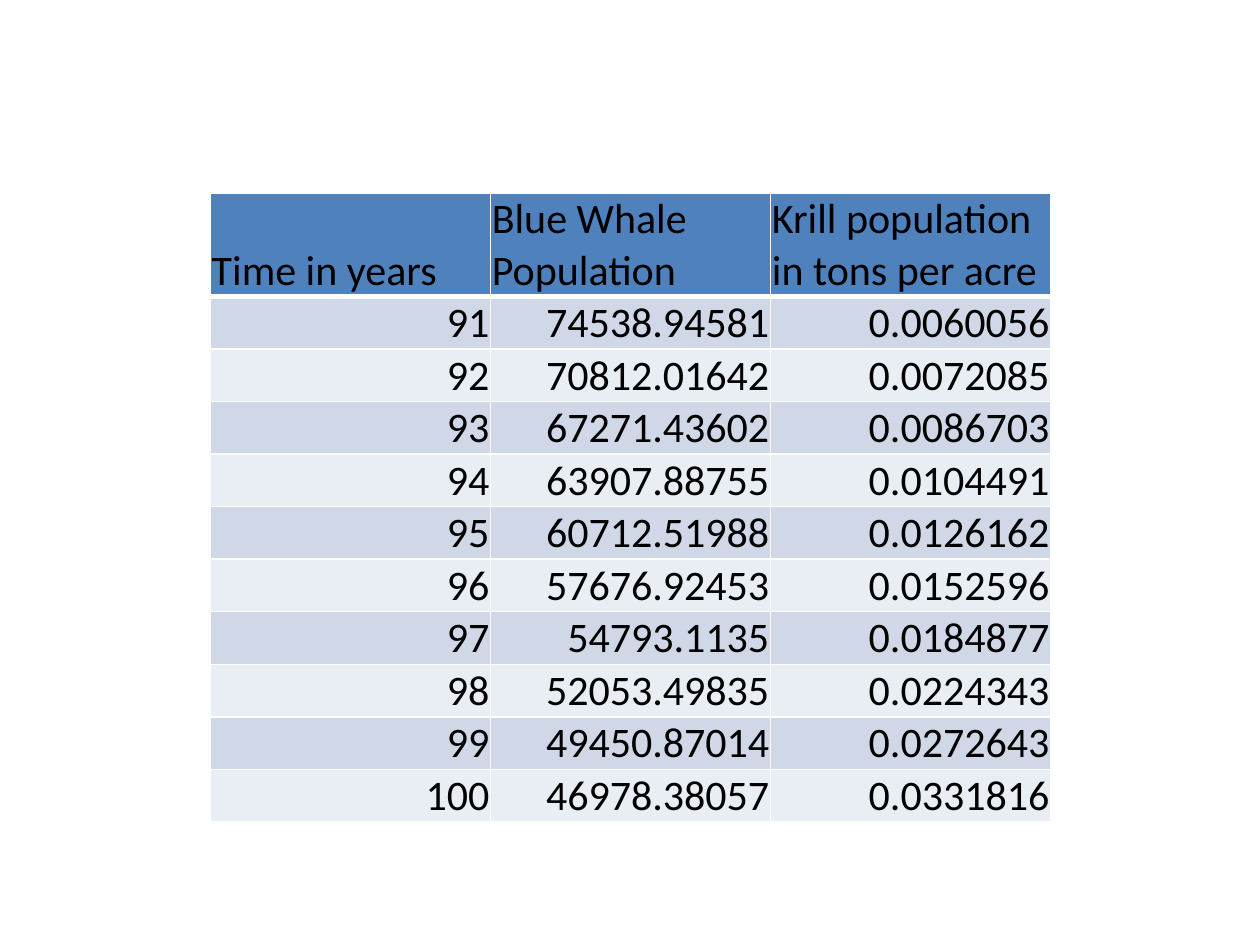
from typing import NamedTuple

from lxml import etree
from pptx import Presentation
from pptx.dml.color import RGBColor
from pptx.enum import text
from pptx.oxml import ns
from pptx.util import Inches, Pt

HEADERS = ("Time in years", "Blue Whale Population", "Krill population in tons per acre")
HEADER_FILL = "4F81BD"
BAND_FILLS = ("D0D8E8", "E9EDF4")
BORDER = "FFFFFF"


class Reading(NamedTuple):
    year: str
    whales: str
    krill: str


READINGS = (
    Reading("91", "74538.94581", "0.0060056"),
    Reading("92", "70812.01642", "0.0072085"),
    Reading("93", "67271.43602", "0.0086703"),
    Reading("94", "63907.88755", "0.0104491"),
    Reading("95", "60712.51988", "0.0126162"),
    Reading("96", "57676.92453", "0.0152596"),
    Reading("97", "54793.1135", "0.0184877"),
    Reading("98", "52053.49835", "0.0224343"),
    Reading("99", "49450.87014", "0.0272643"),
    Reading("100", "46978.38057", "0.0331816"),
)


def color(value: str) -> RGBColor:
    return RGBColor.from_string(value)


def set_borders(cell, top: float = 1, bottom: float = 1) -> None:
    """Draw the four cell borders, with widths in points."""
    tc_pr = cell._tc.get_or_add_tcPr()
    for side, width in (("L", 1), ("R", 1), ("T", top), ("B", bottom)):
        ln = etree.SubElement(tc_pr, ns.qn(f"a:ln{side}"), w=str(Pt(width)))
        fill = etree.SubElement(ln, ns.qn("a:solidFill"))
        etree.SubElement(fill, ns.qn("a:srgbClr"), val=BORDER)


def fill_cell(cell, content: str, fill: str, align: text.PP_ALIGN) -> None:
    cell.fill.solid()
    cell.fill.fore_color.rgb = color(fill)
    cell.margin_left = cell.margin_right = cell.margin_top = Inches(0.01)
    cell.margin_bottom = 0
    cell.vertical_anchor = text.MSO_ANCHOR.BOTTOM
    cell.text = content
    p = cell.text_frame.paragraphs[0]
    p.alignment = align
    p.font.name = "Calibri"
    p.font.size = Pt(24)
    p.font.bold = False
    p.font.color.rgb = color("000000")


def add_population_table(s) -> None:
    rows = (HEADERS, *READINGS)
    table = s.shapes.add_table(
        len(rows), len(HEADERS), Inches(1.67), Inches(1.53), Inches(6.67), Inches(0.41 * len(rows))
    ).table
    for i, row in enumerate(rows):
        is_header = i == 0
        fill = HEADER_FILL if is_header else BAND_FILLS[(i - 1) % 2]
        align = text.PP_ALIGN.LEFT if is_header else text.PP_ALIGN.RIGHT
        for j, content in enumerate(row):
            cell = table.cell(i, j)
            set_borders(cell, top=3 if i == 1 else 1, bottom=3 if is_header else 1)
            fill_cell(cell, content, fill, align)


def main() -> None:
    prs = Presentation()
    prs.slide_width, prs.slide_height = Inches(10), Inches(7.5)
    s = prs.slides.add_slide(prs.slide_layouts[6])
    add_population_table(s)
    prs.save("out.pptx")


if __name__ == "__main__":
    main()
